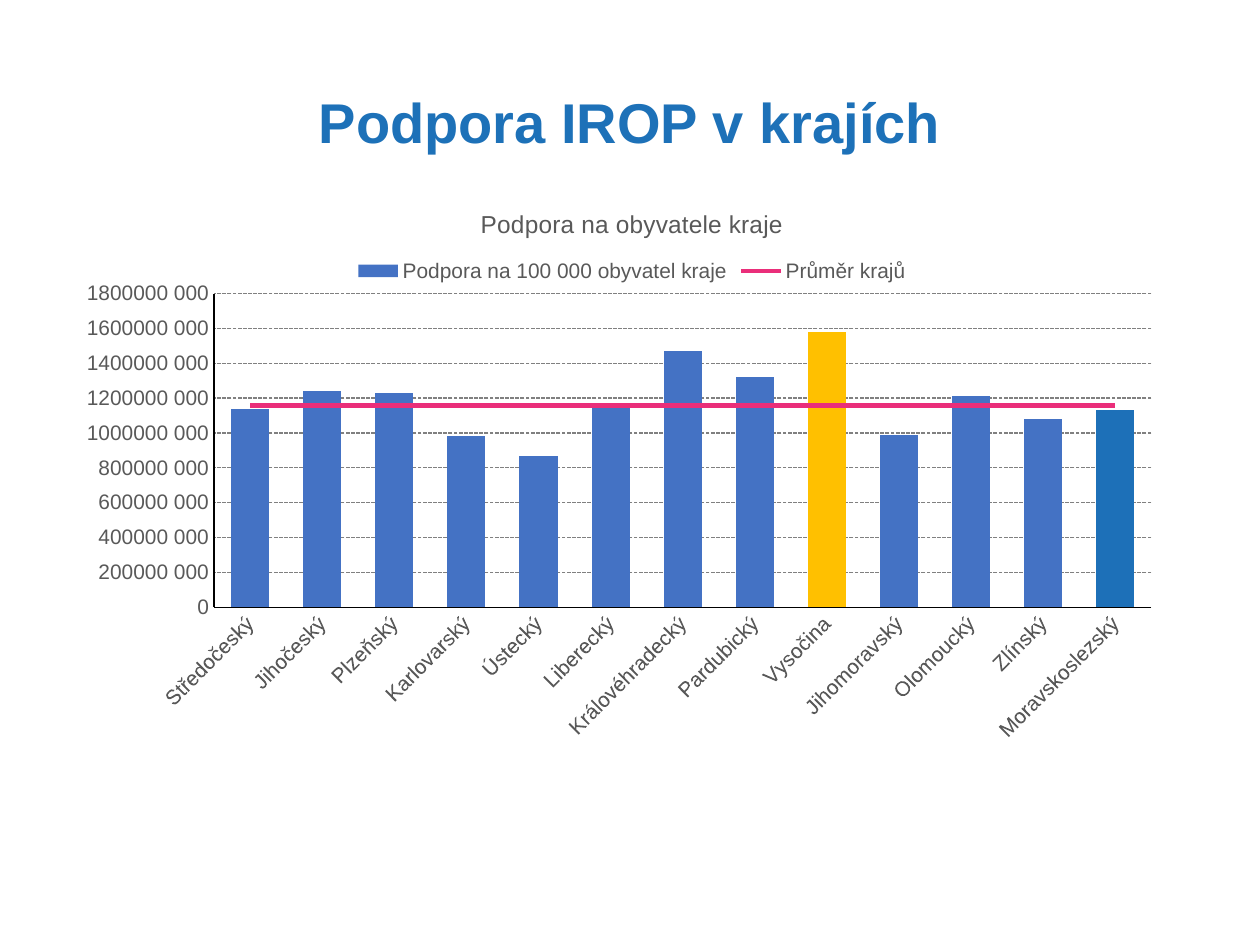
from lxml import etree
from pptx import Presentation
from pptx import util as u
from pptx.chart import data as chart_data
from pptx.dml.color import RGBColor
from pptx.enum import chart as charts, dml, text
from pptx.oxml import parse_xml
from pptx.oxml.ns import nsdecls, qn

COLORS = {
    "title": "1D71B8", "label": "595959", "axis": "000000", "grid": "808080",
    "bar": "4472C4", "top": "FFC000", "home": "1D70B8", "average": "EA2E7A",
}
MILLION = 1_000_000
SUPPORT = {
    "Středočeský": 1140, "Jihočeský": 1240, "Plzeňský": 1230,
    "Karlovarský": 980, "Ústecký": 870, "Liberecký": 1150,
    "Královéhradecký": 1470, "Pardubický": 1320, "Vysočina": 1580,
    "Jihomoravský": 990, "Olomoucký": 1210, "Zlínský": 1080,
    "Moravskoslezský": 1130,
}
AVERAGE = 1160
HIGHLIGHTS = {"Vysočina": "top", "Moravskoslezský": "home"}
PLOT_LAYOUT = {"x": 0.114, "y": 0.187, "w": 0.866, "h": 0.54}


def set_values(target, values):
    for name, value in values.items():
        setattr(target, name, value)


def set_font(font, size, color, bold=False):
    set_values(font, {"name": "Arial", "size": u.Pt(size), "bold": bold})
    font.color.rgb = RGBColor.from_string(COLORS[color])


def set_line(line, color, width, dash=None):
    line.color.rgb = RGBColor.from_string(COLORS[color])
    line.width = u.Pt(width)
    if dash is not None:
        line.dash_style = dash


def set_fill(fill, color):
    fill.solid()
    fill.fore_color.rgb = RGBColor.from_string(COLORS[color])


def add_title(slide, wording):
    title = slide.shapes.title
    set_values(title, {"left": u.Cm(1.75), "top": u.Cm(0.69),
                       "width": u.Cm(21.9), "height": u.Cm(3.68)})
    set_values(title.text_frame, {"word_wrap": True,
                                  "vertical_anchor": text.MSO_ANCHOR.MIDDLE})
    para = title.text_frame.paragraphs[0]
    set_values(para, {"alignment": text.PP_ALIGN.CENTER, "line_spacing": 0.9})
    span = para.add_run()
    span.text = wording
    set_font(span.font, 32, "title", bold=True)


def move_last_series_to_line(chart):
    """Turn the last column series into a line on the same axes."""
    bars = chart._chartSpace.find(f'.//{qn("c:barChart")}')
    series = bars.findall(qn("c:ser"))[-1]
    line_plot = parse_xml(
        f'<c:lineChart {nsdecls("c")}><c:grouping val="standard"/>'
        '<c:varyColors val="0"/><c:marker val="1"/></c:lineChart>')
    for bar_only in series.findall(qn("c:invertIfNegative")):
        series.remove(bar_only)
    line_plot.insert(2, series)
    for axis_id in bars.findall(qn("c:axId")):
        etree.SubElement(line_plot, qn("c:axId")).set("val", axis_id.get("val"))
    bars.addnext(line_plot)


def set_plot_layout(chart):
    plot_area = chart._chartSpace.find(f'.//{qn("c:plotArea")}')
    for old in plot_area.findall(qn("c:layout")):
        plot_area.remove(old)
    modes = '<c:xMode val="edge"/><c:yMode val="edge"/>'
    sizes = "".join(f'<c:{k} val="{v}"/>' for k, v in PLOT_LAYOUT.items())
    plot_area.insert(0, parse_xml(
        f'<c:layout {nsdecls("c")}><c:manualLayout>'
        f'<c:layoutTarget val="inner"/>{modes}{sizes}'
        '</c:manualLayout></c:layout>'))


def format_axes(chart):
    for axis in (chart.category_axis, chart.value_axis):
        set_values(axis, {"major_tick_mark": charts.XL_TICK_MARK.NONE,
                          "minor_tick_mark": charts.XL_TICK_MARK.NONE})
        set_font(axis.tick_labels.font, 12, "label")
        set_line(axis.format.line, "axis", 0.75)
    for label_body in chart._chartSpace.xpath("//c:catAx/c:txPr/a:bodyPr"):
        label_body.set("rot", "-2700000")
    values = chart.value_axis
    set_values(values, {"minimum_scale": 0, "maximum_scale": 1800 * MILLION,
                        "major_unit": 200 * MILLION,
                        "has_major_gridlines": True})
    set_values(values.tick_labels, {"number_format": r"#\ ##0",
                                    "number_format_is_linked": False})
    set_line(values.major_gridlines.format.line, "grid", 0.75,
             dml.MSO_LINE.SQUARE_DOT)


def format_series(chart):
    bar_plot, line_plot = chart.plots
    set_values(bar_plot, {"gap_width": 89, "vary_by_categories": False})
    support, average = bar_plot.series[0], line_plot.series[0]
    set_fill(support.format.fill, "bar")
    regions = list(SUPPORT)
    for region, color in HIGHLIGHTS.items():
        set_fill(support.points[regions.index(region)].format.fill, color)
    average.smooth = False
    average.marker.style = charts.XL_MARKER_STYLE.NONE
    set_line(average.format.line, "average", 2.75)


def add_support_chart(slide):
    data = chart_data.CategoryChartData()
    data.categories = list(SUPPORT)
    data.add_series("Podpora na 100 000 obyvatel kraje",
                    [value * MILLION for value in SUPPORT.values()])
    data.add_series("Průměr krajů", [AVERAGE * MILLION] * len(SUPPORT))
    chart = slide.shapes.add_chart(
        charts.XL_CHART_TYPE.COLUMN_CLUSTERED, u.Cm(1.75), u.Cm(3.73),
        u.Cm(21.9), u.Cm(11.71), data).chart
    set_font(chart.font, 10, "axis")

    para = chart.chart_title.text_frame.paragraphs[0]
    span = para.add_run()
    span.text = "Podpora na obyvatele kraje"
    set_font(span.font, 14, "label")
    chart.chart_title.include_in_layout = False

    chart.has_legend = True
    set_values(chart.legend, {"position": charts.XL_LEGEND_POSITION.TOP,
                              "include_in_layout": False})
    set_font(chart.legend.font, 12, "label")

    move_last_series_to_line(chart)
    set_plot_layout(chart)
    format_axes(chart)
    format_series(chart)


def main():
    deck = Presentation()
    set_values(deck, {"slide_width": u.Cm(25.4), "slide_height": u.Cm(19.05)})
    slide = deck.slides.add_slide(deck.slide_layouts[5])
    add_title(slide, "Podpora IROP v krajích")
    add_support_chart(slide)
    deck.save("out.pptx")


if __name__ == "__main__":
    main()
